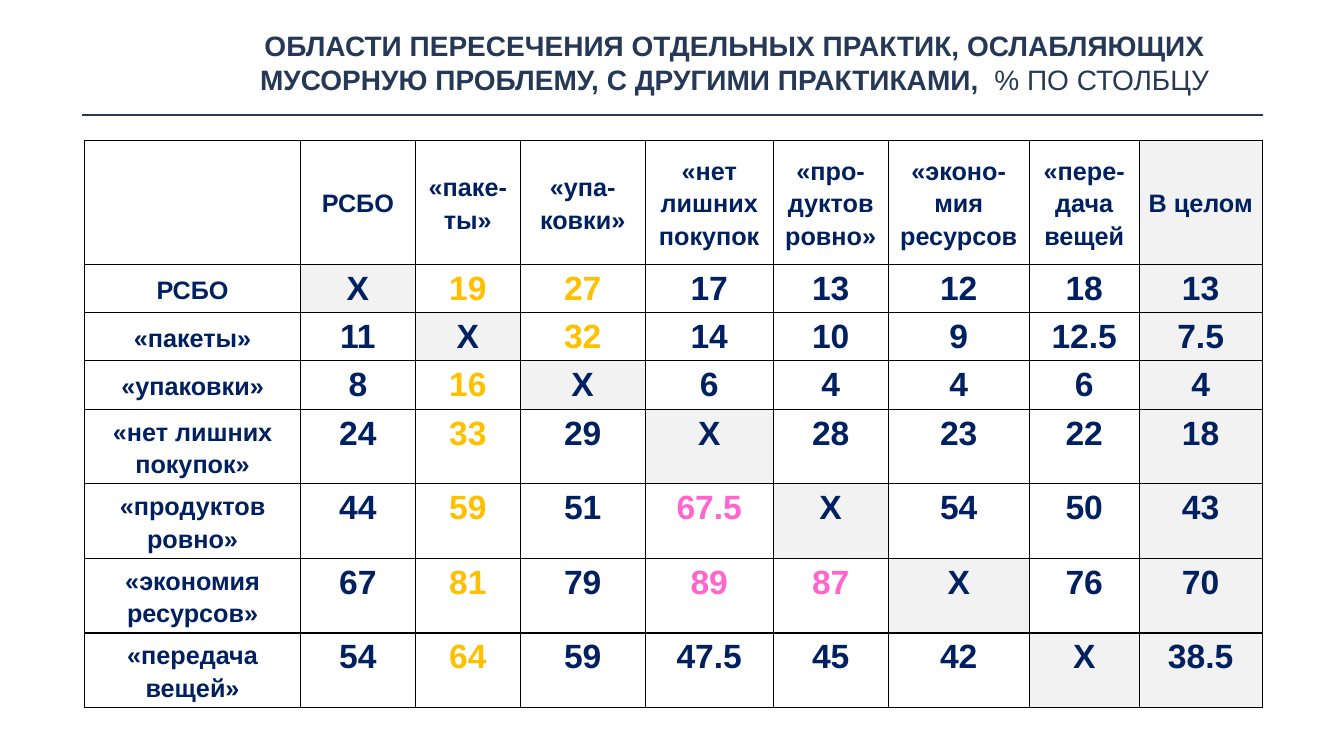
from pptx import Presentation
from pptx.dml.color import RGBColor
from pptx.enum.shapes import MSO_CONNECTOR
from pptx.enum.text import MSO_ANCHOR, PP_ALIGN
from pptx.oxml import parse_xml
from pptx.oxml.ns import nsdecls
from pptx.util import Inches, Pt

NAVY, SLATE, GOLD, PINK, GREY = "002060", "253957", "FFC000", "FF66CC", "F2F2F2"


def color(code):
    return RGBColor.from_string(code)


def style(run, size, code, bold=True):
    form = {"name": "Arial", "size": Pt(size), "bold": bold}
    for key, value in form.items():
        setattr(run.font, key, value)
    run.font.color.rgb = color(code)


prs = Presentation()
prs.slide_width, prs.slide_height = Inches(13.33), Inches(7.5)
slide = prs.slides.add_slide(prs.slide_layouts[6])

# Rule under the title
rule = slide.shapes.add_connector(
    MSO_CONNECTOR.STRAIGHT, Inches(0.81), Inches(1.14), Inches(12.53), Inches(1.14))
rule.line.color.rgb = color(SLATE)
rule.line.width = Pt(1)
rule._element.spPr.append(parse_xml(f"<a:effectLst {nsdecls('a')}/>"))

# Table content
heads = ["", "РСБО", "«паке-ты»", "«упа-ковки»", "«нет\nлишних покупок",
         "«про-дуктов ровно»", "«эконо-мия ресурсов", "«пере-дача вещей", "В целом"]
rows = [
    ["РСБО", "Х", "19", "27", "17", "13", "12", "18", "13"],
    ["«пакеты»", "11", "Х", "32", "14", "10", "9", "12.5", "7.5"],
    ["«упаковки»", "8", "16", "Х", "6", "4", "4", "6", "4"],
    ["«нет лишних покупок»", "24", "33", "29", "Х", "28", "23", "22", "18"],
    ["«продуктов ровно»", "44", "59", "51", "67.5", "Х", "54", "50", "43"],
    ["«экономия ресурсов»", "67", "81", "79", "89", "87", "Х", "76", "70"],
    ["«передача вещей»", "54", "64", "59", "47.5", "45", "42", "Х", "38.5"],
]
gold = {(1, 3), (2, 3)} | {(r, 2) for r in range(1, 8) if r != 2}
pink = {(5, 4), (6, 4), (6, 5)}
widths = [2.14, 1.14, 1.04, 1.24, 1.27, 1.14, 1.4, 1.09, 1.22]
heights = [1.23] + [0.48] * 3 + [0.74] * 4

# Table frame
table = slide.shapes.add_table(
    len(heights), len(widths), Inches(0.84), Inches(1.39),
    Inches(sum(widths)), Inches(sum(heights))).table
table.first_row = table.horz_banding = False
for col, width in zip(table.columns, widths):
    col.width = Inches(width)
for row, height in zip(table.rows, heights):
    row.height = Inches(height)

# Table cells
for r, line in enumerate([heads] + rows):
    for c, text in enumerate(line):
        cell = table.cell(r, c)
        label = r == 0 or c == 0
        form = {"margin_left": Inches(0.07), "margin_right": Inches(0.07),
                "margin_top": 0, "margin_bottom": 0,
                "vertical_anchor": MSO_ANCHOR.MIDDLE if label else MSO_ANCHOR.TOP}
        for key, value in form.items():
            setattr(cell, key, value)

        # Grey diagonal and total column
        if c == 8 or r == c > 0:
            cell.fill.solid()
            cell.fill.fore_color.rgb = color(GREY)
        else:
            cell.fill.background()
        for spot, side in enumerate("LRTB"):
            cell._tc.get_or_add_tcPr().insert(spot, parse_xml(
                f'<a:ln{side} {nsdecls("a")} w="12700"><a:solidFill>'
                f'<a:srgbClr val="000000"/></a:solidFill></a:ln{side}>'))

        code = GOLD if (r, c) in gold else PINK if (r, c) in pink else NAVY
        cell.text = text
        for para in cell.text_frame.paragraphs:
            para.alignment = PP_ALIGN.CENTER
            para.line_spacing = 1.15
            for run in para.runs:
                style(run, 18 if label else 24, code)

# Title
box = slide.shapes.add_textbox(Inches(2.04), Inches(0.22), Inches(10.49), Inches(0.8))
frame = box.text_frame
form = {"word_wrap": True, "vertical_anchor": MSO_ANCHOR.MIDDLE}
form |= {f"margin_{side}": Inches(0.06) for side in ("left", "right", "top", "bottom")}
for key, value in form.items():
    setattr(frame, key, value)
para = frame.paragraphs[0]
para.alignment = PP_ALIGN.CENTER
for text, bold in [
    ("ОБЛАСТИ ПЕРЕСЕЧЕНИЯ ОТДЕЛЬНЫХ ПРАКТИК, ОСЛАБЛЯЮЩИХ "
     "МУСОРНУЮ ПРОБЛЕМУ, С ДРУГИМИ ПРАКТИКАМИ,  ", True),
    ("% ПО СТОЛБЦУ", False),
]:
    run = para.add_run()
    run.text = text
    style(run, 20, SLATE, bold)

prs.save("out.pptx")
